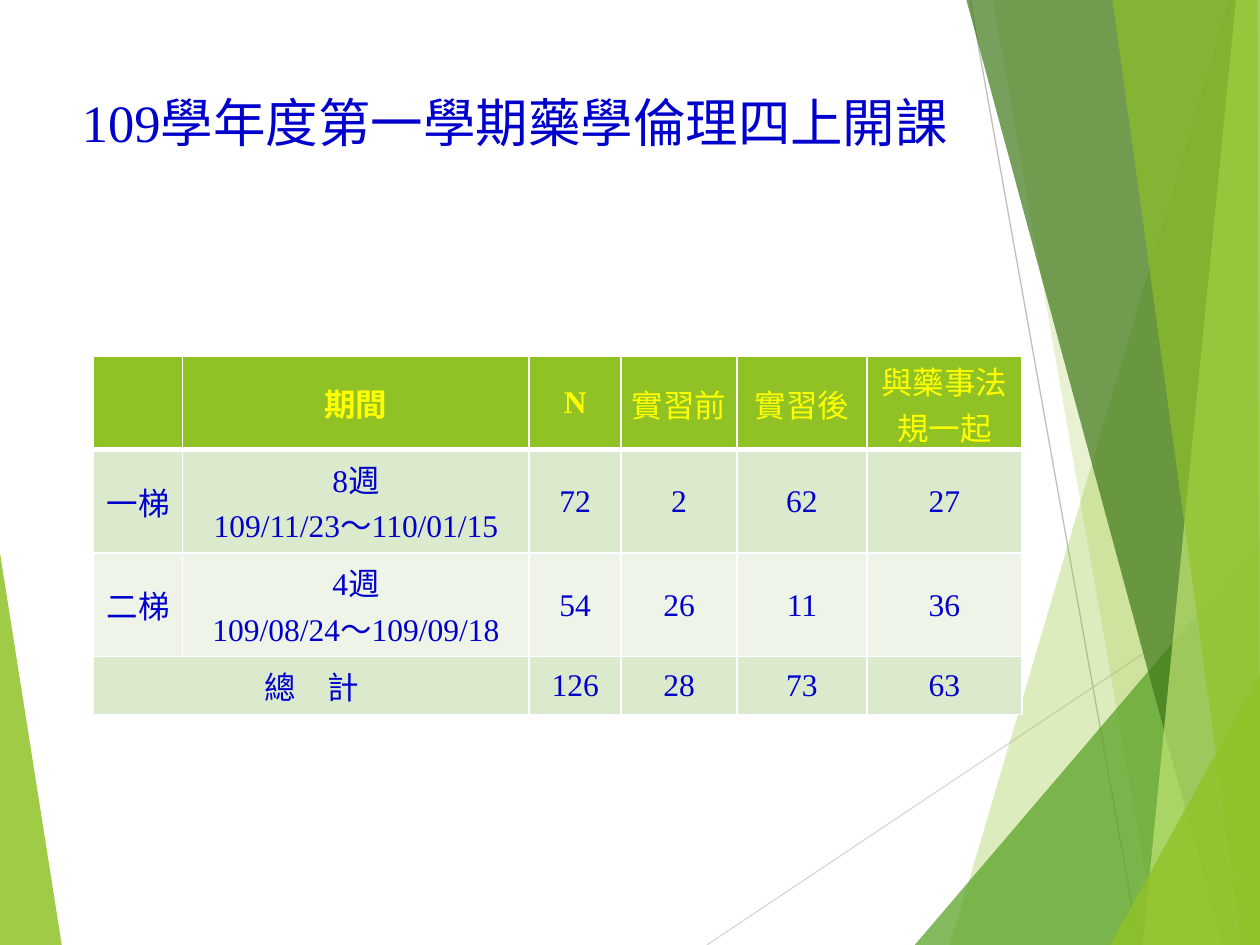
import lxml.etree
import pptx
import pptx.dml.color
import pptx.enum.shapes
import pptx.enum.text
import pptx.oxml.ns
import pptx.util

Inches = pptx.util.Inches
Pt = pptx.util.Pt
qn = pptx.oxml.ns.qn

FONT = "Times New Roman"
COLORS = {
    "blue": "0000CC", "yellow": "FFFF00", "white": "FFFFFF",
    "lime": "90C226", "green": "54A021", "forest": "3F7819", "pale": "C0E474",
    "band_dark": "DBE9CD", "band_light": "EEF4E8",
    "line_light": "D9D9D9", "line_gray": "BFBFBF",
}

# Facets: corner points, colour, opacity in percent
LEFT_FACET = ([(0, 4.39), (0.49, 7.5), (0, 7.5)], "lime", 85)
RIGHT_FACETS = [
    ([(9.75, 0), (7.54, 7.5), (10, 7.5), (10, 0)], "lime", 30),
    ([(7.88, 0), (9.19, 7.5), (10, 7.5), (10, 0)], "lime", 20),
    ([(7.26, 7.5), (10, 4.29), (10, 7.5)], "green", 72),
    ([(7.67, 0), (9.7, 7.5), (10, 7.5), (10, 0)], "forest", 70),
    ([(9.81, 0), (9.07, 7.5), (10, 7.5), (10, 0)], "pale", 70),
    ([(8.83, 0), (9.86, 7.5), (10, 7.5), (9.98, 0)], "lime", 65),
    ([(8.81, 7.5), (10, 5.35), (10, 7.5)], "lime", 80),
]
FACET_LINES = [
    ((5.61, 7.5), (10, 4.57), "line_light"),
    ((7.7, 0), (9.04, 7.5), "line_gray"),
]

COLUMN_WIDTHS = [0.71, 2.75, 0.73, 0.92, 1.03, 1.23]
ROW_HEIGHTS = [0.74, 0.82, 0.82, 0.46]
ROW_FILLS = ["lime", "band_dark", "band_light", "band_dark"]
TABLE_ROWS = [
    ["", "期間", "N", "實習前", "實習後", "與藥事法規一起"],
    ["一梯", "8週\n109/11/23～110/01/15", "72", "2", "62", "27"],
    ["二梯", "4週\n109/08/24～109/09/18", "54", "26", "11", "36"],
    ["總　計", "", "126", "28", "73", "63"],
]


def rgb(name):
    return pptx.dml.color.RGBColor.from_string(COLORS[name])


def add_span(para, text, size, color, bold=False):
    span = para.add_run()
    span.text = text
    span.font.name = FONT
    span.font.size = Pt(size)
    span.font.bold = bold
    span.font.color.rgb = rgb(color)


def add_facet(page, points, color, opacity):
    builder = page.shapes.build_freeform(
        Inches(points[0][0]), Inches(points[0][1]))
    builder.add_line_segments(
        [(Inches(x), Inches(y)) for x, y in points[1:]], close=True)
    facet = builder.convert_to_shape()
    facet.shadow.inherit = False
    facet.line.fill.background()
    facet.fill.solid()
    facet.fill.fore_color.rgb = rgb(color)
    color_node = next(facet.element.spPr.iter(qn("a:srgbClr")))
    lxml.etree.SubElement(color_node, qn("a:alpha"), val=str(opacity * 1000))


def add_facet_line(page, start, end, color):
    line = page.shapes.add_connector(
        pptx.enum.shapes.MSO_CONNECTOR.STRAIGHT,
        *[Inches(value) for value in start + end])
    line.line.color.rgb = rgb(color)
    line.line.width = Pt(0.75)
    lxml.etree.SubElement(line.element.spPr, qn("a:effectLst"))


def set_title(page, text):
    title = page.shapes.title
    title.left, title.top = Inches(0.55), Inches(0.66)
    title.width, title.height = Inches(7.9), Inches(0.61)
    frame = title.text_frame
    frame.word_wrap = True
    frame.vertical_anchor = pptx.enum.text.MSO_ANCHOR.MIDDLE
    para = frame.paragraphs[0]
    para.alignment = pptx.enum.text.PP_ALIGN.LEFT
    add_span(para, text, 30, "blue")


def set_borders(cell, widths):
    """Draw white borders; widths are points for left, right, top, bottom."""
    properties = cell._tc.get_or_add_tcPr()
    for index, (side, width) in enumerate(zip("LRTB", widths)):
        border = lxml.etree.Element(qn("a:ln" + side), w=str(Pt(width)))
        fill = lxml.etree.SubElement(border, qn("a:solidFill"))
        lxml.etree.SubElement(fill, qn("a:srgbClr"), val=COLORS["white"])
        properties.insert(index, border)


def fill_cell(cell, text, row, column):
    header = row == 0
    cell.fill.solid()
    cell.fill.fore_color.rgb = rgb(ROW_FILLS[row])
    cell.vertical_anchor = pptx.enum.text.MSO_ANCHOR.MIDDLE

    # Number columns are tight; the header "N" keeps the wider margins
    tight = column > 2 or (column == 2 and not header)
    cell.margin_left = cell.margin_right = Inches(0.01 if tight else 0.07)
    cell.margin_top = Inches(0.01 if tight else 0.04)
    cell.margin_bottom = Inches(0 if tight else 0.04)

    # A heavier rule divides the header from the body
    set_borders(cell, (1, 1, 3 if row == 1 else 1, 3 if header else 1))

    if not text:
        return
    for index, line in enumerate(text.split("\n")):
        frame = cell.text_frame
        para = frame.add_paragraph() if index else frame.paragraphs[0]
        para.alignment = pptx.enum.text.PP_ALIGN.CENTER
        add_span(para, line, 18, "yellow" if header else "blue",
                 bold=header and column < 3)


def add_course_table(page):
    frame = page.shapes.add_table(
        len(ROW_HEIGHTS), len(COLUMN_WIDTHS), Inches(0.74), Inches(2.83),
        Inches(sum(COLUMN_WIDTHS)), Inches(sum(ROW_HEIGHTS)))
    table = frame.table
    for column, width in zip(table.columns, COLUMN_WIDTHS):
        column.width = Inches(width)
    for row, height in zip(table.rows, ROW_HEIGHTS):
        row.height = Inches(height)
    for row, texts in enumerate(TABLE_ROWS):
        for column, text in enumerate(texts):
            fill_cell(table.cell(row, column), text, row, column)
    # The total label covers the first two columns
    table.cell(3, 0).merge(table.cell(3, 1))


def main():
    deck = pptx.Presentation()
    deck.slide_width, deck.slide_height = Inches(10), Inches(7.5)
    page = deck.slides.add_slide(deck.slide_layouts[5])

    # Background decoration
    add_facet(page, *LEFT_FACET)
    for facet_line in FACET_LINES:
        add_facet_line(page, *facet_line)
    for facet in RIGHT_FACETS:
        add_facet(page, *facet)

    # Content
    set_title(page, "109學年度第一學期藥學倫理四上開課")
    add_course_table(page)
    deck.save("out.pptx")


if __name__ == "__main__":
    main()
